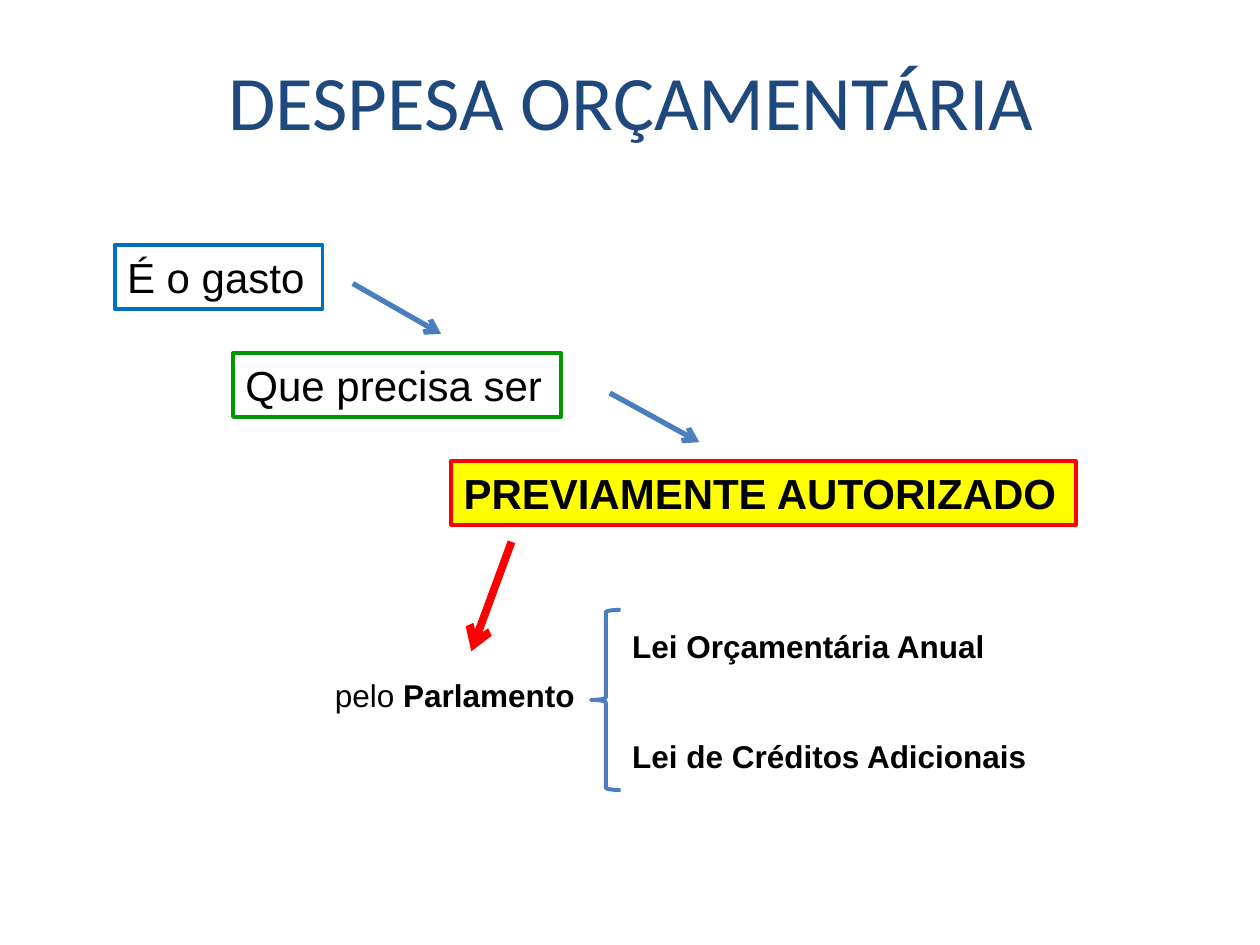
"""Build the slide on authorised budget expenditure."""
from typing import NamedTuple, Optional

from lxml import etree
from pptx import Presentation
from pptx.dml.color import RGBColor
from pptx.enum import shapes as kinds, text as modes
from pptx.oxml import ns
from pptx.util import Pt

BLACK = RGBColor(0, 0, 0)
NAVY = RGBColor(0x1F, 0x49, 0x7D)
STEEL = RGBColor(0x4B, 0x7E, 0xBC)
BLUE = RGBColor(0, 0x70, 0xC0)
GREEN = RGBColor(0, 0x99, 0)
RED = RGBColor(0xFF, 0, 0)
YELLOW = RGBColor(0xFF, 0xFF, 0)


class Label(NamedTuple):
    left: float
    top: float
    width: float
    plain: str = ""
    bold: str = ""
    size: float = 18
    height: float = 29
    line: Optional[RGBColor] = None
    fill: Optional[RGBColor] = None


class Arrow(NamedTuple):
    start: tuple[float, float]
    end: tuple[float, float]
    color: RGBColor = STEEL
    width: float = 3


STEP = {"size": 24, "height": 36.3}
LABELS = [
    Label(65.5, 140.2, 118.8, "É o gasto", line=BLUE, **STEP),
    Label(133.2, 201.9, 187.2, "Que precisa ser", line=GREEN, **STEP),
    Label(257.8, 263.6, 357.1, bold="PREVIAMENTE AUTORIZADO",
          line=RED, fill=YELLOW, **STEP),
    Label(184.3, 382.6, 153.4, "pelo ", "Parlamento"),
    Label(354.2, 355, 260.6, bold="Lei Orçamentária Anual"),
    Label(354.2, 417.6, 244.1, bold="Lei de Créditos Adicionais"),
]
ARROWS = [
    Arrow((292.3, 309.6), (269.3, 372.2), RED, 4.5),
    Arrow((201.6, 162), (252, 190.8)),
    Arrow((348.5, 224.6), (399.6, 252.7)),
]


def add_label(slide, label: Label) -> None:
    """Draw one text box, framed when it has a line colour."""
    box = slide.shapes.add_textbox(
        Pt(label.left), Pt(label.top), Pt(label.width), Pt(label.height))
    frame = box.text_frame
    frame.word_wrap = True
    frame.auto_size = modes.MSO_AUTO_SIZE.SHAPE_TO_FIT_TEXT
    for words, bold in ((label.plain, False), (label.bold, True)):
        if words:
            run = frame.paragraphs[0].add_run()
            run.text = words
            run.font.name = "Arial"
            run.font.size = Pt(label.size)
            run.font.bold = bold
            run.font.color.rgb = BLACK
    if label.line is not None:
        box.line.color.rgb = label.line
        box.line.width = Pt(2.25)
    if label.fill is not None:
        box.fill.solid()
        box.fill.fore_color.rgb = label.fill


def add_arrow(slide, arrow: Arrow) -> None:
    """Draw one straight arrow with an open head."""
    link = slide.shapes.add_connector(
        kinds.MSO_CONNECTOR.STRAIGHT,
        *(Pt(n) for n in arrow.start + arrow.end))
    link.line.color.rgb = arrow.color
    link.line.width = Pt(arrow.width)
    line = link.line._get_or_add_ln()
    etree.SubElement(line, ns.qn("a:tailEnd"), type="arrow")
    etree.SubElement(link._element.spPr, ns.qn("a:effectLst"))


def add_title(slide, words: str) -> None:
    """Fill and place the title."""
    title = slide.shapes.title
    title.left, title.top = Pt(36.7), Pt(20.2)
    title.width, title.height = Pt(648), Pt(73.4)
    frame = title.text_frame
    frame.text = words
    frame.vertical_anchor = modes.MSO_ANCHOR.MIDDLE
    head = frame.paragraphs[0]
    head.alignment = modes.PP_ALIGN.CENTER
    font = head.runs[0].font
    font.name = "Calibri"
    font.size = Pt(44)
    font.color.rgb = NAVY


def add_brace(slide) -> None:
    """Draw the brace that groups the two laws."""
    brace = slide.shapes.add_shape(
        kinds.MSO_SHAPE.LEFT_BRACE, Pt(337.7), Pt(348.5), Pt(17), Pt(103))
    brace.shadow.inherit = False
    brace.fill.background()
    brace.line.color.rgb = STEEL
    brace.line.width = Pt(2.25)


def main() -> None:
    """Build and save the slide."""
    deck = Presentation()
    deck.slide_width, deck.slide_height = Pt(720), Pt(540)
    slide = deck.slides.add_slide(deck.slide_layouts[5])
    add_title(slide, "DESPESA ORÇAMENTÁRIA")
    for label in LABELS:
        add_label(slide, label)
    add_brace(slide)
    for arrow in ARROWS:
        add_arrow(slide, arrow)
    deck.save("out.pptx")


if __name__ == "__main__":
    main()
